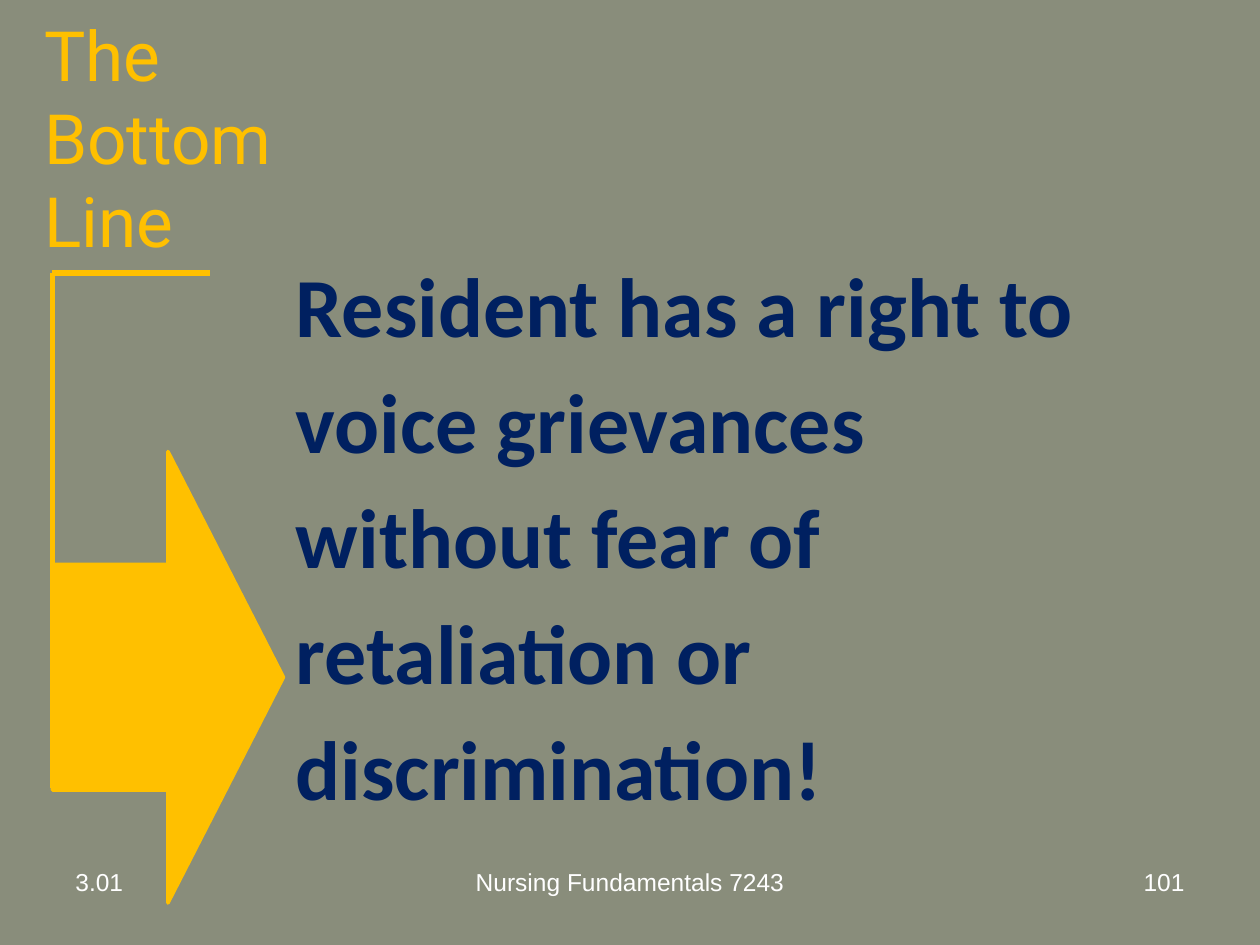
from dataclasses import dataclass

from lxml.etree import SubElement
from pptx import Presentation
from pptx.dml.color import RGBColor
from pptx.enum.shapes import MSO_CONNECTOR, MSO_SHAPE
from pptx.enum.text import MSO_ANCHOR, MSO_AUTO_SIZE, PP_ALIGN
from pptx.oxml.ns import qn
from pptx.slide import Slide
from pptx.text.text import TextFrame
from pptx.util import Pt

COLORS = {
    "background": "898D7B",
    "accent": "FFC000",
    "statement": "002060",
    "footer": "FFFFFF",
}


@dataclass
class TextStyle:
    font: str
    size: float
    color: str
    bold: bool = False
    align: PP_ALIGN = PP_ALIGN.LEFT
    anchor: MSO_ANCHOR = MSO_ANCHOR.TOP
    line_spacing: float = 1.0
    space_after: float = 0


@dataclass
class Caption:
    text: str
    left: float
    top: float
    width: float
    height: float
    style: TextStyle


@dataclass
class Rule:
    x1: float
    y1: float
    x2: float
    y2: float


def footer_style(align: PP_ALIGN) -> TextStyle:
    return TextStyle("Arial", 14, "footer", align=align)


TITLE = Caption("The\vBottom\vLine", 18, 18, 216, 120,
                TextStyle("Roboto", 39.6, "accent", anchor=MSO_ANCHOR.MIDDLE))
CAPTIONS = [
    Caption("Nursing Fundamentals 7243", 246, 492, 228, 37.5, footer_style(PP_ALIGN.CENTER)),
    Caption("101", 516, 492, 168, 37.5, footer_style(PP_ALIGN.RIGHT)),
    Caption("3.01", 36, 492, 168, 37.5, footer_style(PP_ALIGN.LEFT)),
    Caption("Resident has a right to voice grievances without fear of "
            "retaliation or discrimination!", 162, 132.5, 492, 342,
            TextStyle("Calibri", 48, "statement", bold=True,
                      line_spacing=1.15, space_after=10)),
]
RULES = [Rule(30, 156, 120, 156), Rule(30, 156, 30, 450)]


def rgb(name: str) -> RGBColor:
    return RGBColor.from_string(COLORS[name])


def write_text(frame: TextFrame, text: str, style: TextStyle) -> None:
    frame.text = text
    frame.word_wrap = True
    frame.auto_size = MSO_AUTO_SIZE.NONE
    frame.vertical_anchor = style.anchor
    for paragraph in frame.paragraphs:
        paragraph.alignment = style.align
        paragraph.line_spacing = style.line_spacing
        paragraph.space_after = Pt(style.space_after)
        for run in paragraph.runs:
            run.font.name = style.font
            run.font.size = Pt(style.size)
            run.font.bold = style.bold
            run.font.color.rgb = rgb(style.color)


def place_title(slide: Slide, caption: Caption) -> None:
    title = slide.shapes.title
    title.left, title.top = Pt(caption.left), Pt(caption.top)
    title.width, title.height = Pt(caption.width), Pt(caption.height)
    write_text(title.text_frame, caption.text, caption.style)


def add_caption(slide: Slide, caption: Caption) -> None:
    box = slide.shapes.add_textbox(Pt(caption.left), Pt(caption.top),
                                   Pt(caption.width), Pt(caption.height))
    write_text(box.text_frame, caption.text, caption.style)


def add_rule(slide: Slide, rule: Rule) -> None:
    line = slide.shapes.add_connector(MSO_CONNECTOR.STRAIGHT, Pt(rule.x1), Pt(rule.y1),
                                      Pt(rule.x2), Pt(rule.y2))
    line.line.color.rgb = rgb("accent")
    line.line.width = Pt(3)
    SubElement(line._element.spPr, qn("a:effectLst"))


def add_arrow(slide: Slide) -> None:
    arrow = slide.shapes.add_shape(MSO_SHAPE.RIGHT_ARROW, Pt(30), Pt(258), Pt(132), Pt(258))
    arrow.shadow.inherit = False
    arrow.fill.solid()
    arrow.fill.fore_color.rgb = rgb("accent")
    arrow.line.color.rgb = rgb("accent")
    arrow.line.width = Pt(2)


def main() -> None:
    presentation = Presentation()
    presentation.slide_width, presentation.slide_height = Pt(720), Pt(540)
    slide = presentation.slides.add_slide(presentation.slide_layouts[5])
    slide.background.fill.solid()
    slide.background.fill.fore_color.rgb = rgb("background")
    place_title(slide, TITLE)
    for rule in RULES:
        add_rule(slide, rule)
    add_arrow(slide)
    for caption in CAPTIONS:
        add_caption(slide, caption)
    presentation.save("out.pptx")


if __name__ == "__main__":
    main()
